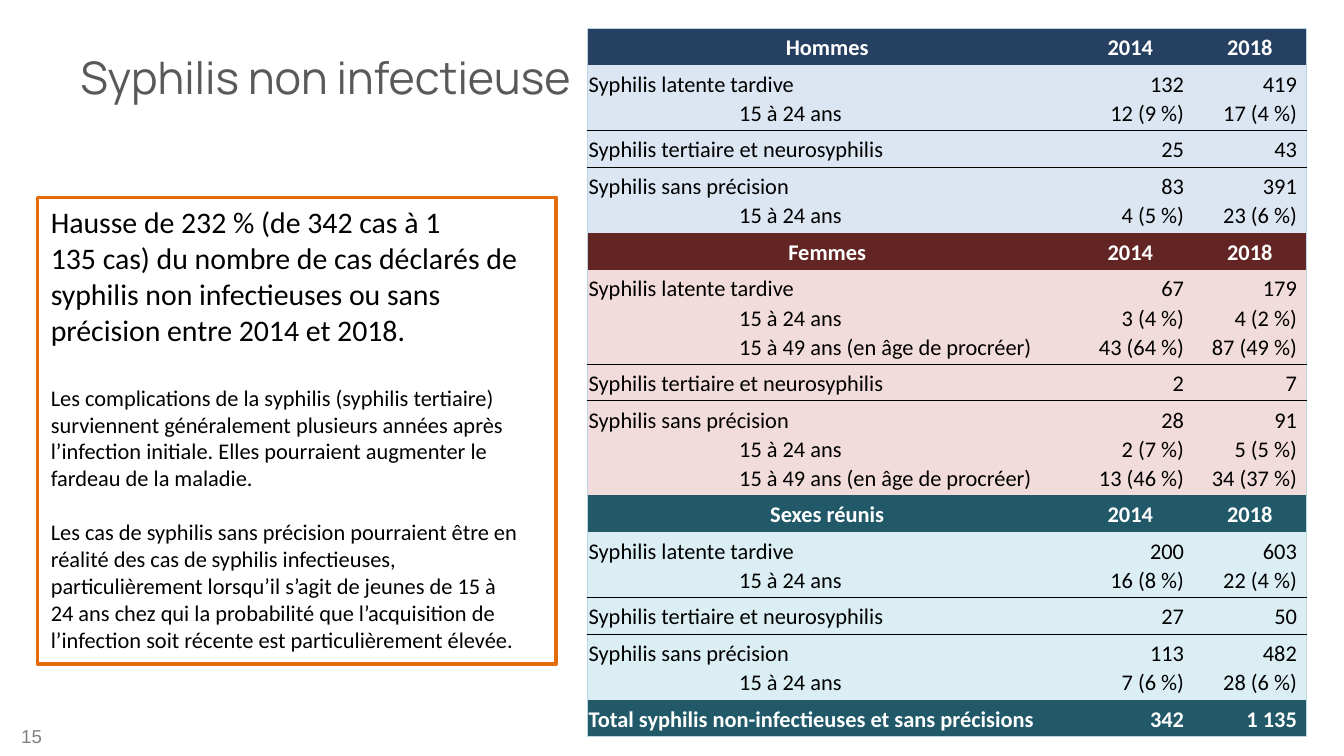
import pptx
import pptx.dml.color
import pptx.enum.shapes
import pptx.enum.text
import pptx.oxml
import pptx.oxml.ns
import pptx.util
from pptx.util import Inches

ALIGN = pptx.enum.text.PP_ALIGN
ANCHOR = pptx.enum.text.MSO_ANCHOR
YEARS = ("2014", "2018")
FRAME = ("BCD7E1", 0.75)
RULE = ("000000", 0.5)
ROW_HEIGHTS = {1: 0.17, 2: 0.29, 3: 0.41}
FIXED_SPACES = {"~": chr(160), "^": chr(8201)}
LATE, TERTIARY, UNSPECIFIED = (
    "Syphilis latente tardive",
    "Syphilis tertiaire et neurosyphilis",
    "Syphilis sans précision",
)
YOUNG = "15 à 24 ans"
FERTILE = "15 à 49 ans (en âge de procréer)"

GROUPS = [
    ("Hommes", "254061", "DCE6F2", [
        [(LATE, "132", "419"), ("15 à 24~ans", "12 (9~%)", "17 (4~%)")],
        [(TERTIARY, "25", "43")],
        [(UNSPECIFIED, "83", "391"), (YOUNG, "4 (5~%)", "23 (6~%)")],
    ]),
    ("Femmes", "632523", "F2DCDB", [
        [(LATE, "67", "179"), (YOUNG, "3 (4~%)", "4 (2~%)"),
         (FERTILE, "43 (64~%)", "87 (49~%)")],
        [(TERTIARY, "2", "7")],
        [(UNSPECIFIED, "28", "91"), (YOUNG, "2 (7~%)", "5 (5~%)"),
         (FERTILE, "13 (46~%)", "34 (37~%)")],
    ]),
    ("Sexes réunis", "215968", "DBEEF4", [
        [(LATE, "200", "603"), (YOUNG, "16 (8~%)", "22 (4~%)")],
        [(TERTIARY, "27", "50")],
        [(UNSPECIFIED, "113", "482"), (YOUNG, "7 (6~%)", "28 (6~%)")],
    ]),
]
TOTAL = ("Total syphilis non-infectieuses et sans précisions", "342", "1~135")

MESSAGES = [
    ("Hausse de 232~% (de 342~cas à 1^135~cas) du nombre de cas déclarés de "
     "syphilis non infectieuses ou sans précision entre 2014 et 2018.", 16, 0),
    ("Les complications de la syphilis (syphilis tertiaire) surviennent "
     "généralement plusieurs années après l’infection initiale. Elles "
     "pourraient augmenter le fardeau de la maladie.", 12, 19.5),
    ("Les cas de syphilis sans précision pourraient être en réalité des cas "
     "de^syphilis infectieuses, particulièrement lorsqu’il s’agit de jeunes "
     "de 15 à 24~ans chez qui la probabilité que l’acquisition de "
     "l’infection soit récente est particulièrement élevée.", 12, 14.6),
]


def rgb(value):
    """Turn a hex string into a colour."""
    return pptx.dml.color.RGBColor.from_string(value)


def add_span(para, text, size, color, font="Calibri", bold=False):
    """Append one formatted run, with ~ and ^ as no-break and thin spaces."""
    span = para.add_run()
    span.text = text.translate(str.maketrans(FIXED_SPACES))
    span.font.name = font
    span.font.size = pptx.util.Pt(size)
    span.font.bold = bold
    span.font.color.rgb = rgb(color)


def next_para(frame, index):
    """Return the first paragraph of a frame, or a new one after it."""
    return frame.add_paragraph() if index else frame.paragraphs[0]


def add_label(page, box, text, size, color, font, align=ALIGN.LEFT):
    """Place a one-line text box, centred vertically."""
    label = page.shapes.add_textbox(*map(Inches, box))
    frame = label.text_frame
    frame.word_wrap = True
    frame.vertical_anchor = ANCHOR.MIDDLE
    frame.paragraphs[0].alignment = align
    add_span(frame.paragraphs[0], text, size, color, font)


def add_message_box(page, box):
    """Place the outlined box with the key messages."""
    panel = page.shapes.add_shape(
        pptx.enum.shapes.MSO_SHAPE.RECTANGLE, *map(Inches, box))
    panel.shadow.inherit = False
    panel.fill.solid()
    panel.fill.fore_color.rgb = rgb("FFFFFF")
    panel.line.color.rgb = rgb("E46C0A")
    panel.line.width = pptx.util.Pt(2)
    frame = panel.text_frame
    frame.word_wrap = True
    frame.vertical_anchor = ANCHOR.TOP
    frame.auto_size = pptx.enum.text.MSO_AUTO_SIZE.SHAPE_TO_FIT_TEXT
    for index, (text, size, gap) in enumerate(MESSAGES):
        para = next_para(frame, index)
        para.alignment = ALIGN.LEFT
        para.space_before = pptx.util.Pt(gap)
        add_span(para, text, size, "000000")


def set_borders(cell, edges):
    """Draw the given cell edges and clear the others."""
    properties = cell._tc.get_or_add_tcPr()
    for index, side in enumerate("LRTB"):
        color, width = edges.get(side, (None, 0))
        paint = (f'<a:solidFill><a:srgbClr val="{color}"/></a:solidFill>'
                 if color else "<a:noFill/>")
        line = pptx.oxml.parse_xml(
            f'<a:ln{side} {pptx.oxml.ns.nsdecls("a")} '
            f'w="{int(pptx.util.Pt(width))}">{paint}</a:ln{side}>')
        properties.insert(index, line)


def fill_cell(cell, lines, align, fill, color, bold, edges):
    """Write the lines of a cell and style it."""
    right = 0.07 if align == ALIGN.RIGHT else 0.01
    cell.margin_left, cell.margin_right = Inches(0.01), Inches(right)
    cell.margin_top = cell.margin_bottom = Inches(0.03)
    cell.vertical_anchor = ANCHOR.MIDDLE
    cell.fill.solid()
    cell.fill.fore_color.rgb = rgb(fill)
    set_borders(cell, edges)
    for index, text in enumerate(lines):
        para = next_para(cell.text_frame, index)
        para.alignment = align
        para.line_spacing = 1.07
        if index and align == ALIGN.LEFT:
            para._p.get_or_add_pPr().set("marL", str(Inches(1.12)))
        add_span(para, text, 12, color, bold=bold)


def table_rows():
    """List each row as lines, alignments, fill, text colour, bold, edges."""
    centred = (ALIGN.CENTER,) * 3
    aligned = (ALIGN.LEFT, ALIGN.RIGHT, ALIGN.RIGHT)
    rows = []
    for name, dark, light, entries in GROUPS:
        top = {} if rows else {"T": FRAME}
        rows.append(([(name, *YEARS)], centred, dark, "FFFFFF", True, top))
        for index, lines in enumerate(entries):
            edges = {"T": RULE} if index else {}
            if index < len(entries) - 1:
                edges["B"] = RULE
            rows.append((lines, aligned, light, "000000", False, edges))
    rows.append(([TOTAL], aligned, GROUPS[-1][1], "FFFFFF", True, {"B": FRAME}))
    return rows


def add_case_table(page, box, widths):
    """Place the table of cases by sex and year."""
    rows = table_rows()
    holder = page.shapes.add_table(len(rows), len(widths), *map(Inches, box))
    table = holder.table
    table.first_row = table.horz_banding = False
    for column, width in zip(table.columns, widths):
        column.width = Inches(width)
    sides = ({"L": FRAME}, {}, {"R": FRAME})
    for r, (lines, aligns, fill, color, bold, edges) in enumerate(rows):
        table.rows[r].height = Inches(ROW_HEIGHTS[len(lines)])
        for c, texts in enumerate(zip(*lines)):
            fill_cell(table.cell(r, c), texts, aligns[c], fill, color, bold,
                      {**edges, **sides[c]})
    holder.height = Inches(box[3])


def main():
    """Build the slide and save it."""
    deck = pptx.Presentation()
    deck.slide_width = Inches(10)
    deck.slide_height = deck.slide_width * 9 // 16
    page = deck.slides.add_slide(deck.slide_layouts[6])
    add_label(page, (0.5, 0.1, 9, 0.94), "Syphilis non infectieuse",
              24, "595959", "Manrope")
    add_case_table(page, (4.37, 0.21, 5.35, 5.1), (3.57, 0.94, 0.84))
    add_label(page, (-0.07, 5.33, 0.48, 0.3), "15", 10, "808080", "Arial",
              ALIGN.RIGHT)
    add_message_box(page, (0.28, 1.47, 3.86, 3.47))
    deck.save("out.pptx")


if __name__ == "__main__":
    main()
